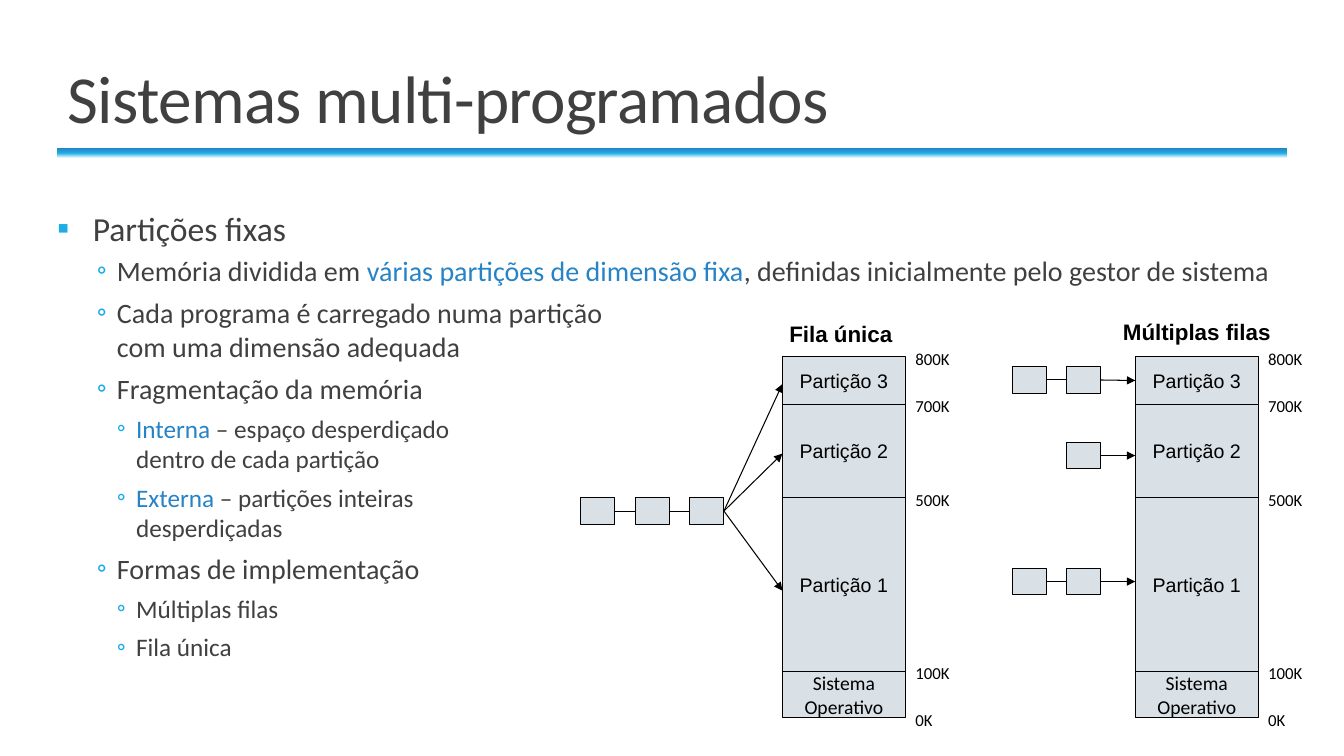
from copy import deepcopy
from dataclasses import dataclass
from itertools import accumulate

from lxml.etree import SubElement
from pptx import Presentation
from pptx.dml.color import RGBColor
from pptx.enum.shapes import MSO_CONNECTOR as Connector, MSO_SHAPE as Preset
from pptx.enum.text import MSO_ANCHOR as Anchor, MSO_AUTO_SIZE as AutoSize, PP_ALIGN as Align
from pptx.oxml.ns import qn
from pptx.util import Inches, Pt


@dataclass(frozen=True)
class Theme:
    text: str = "404040"
    accent: str = "2683C6"
    bullet: str = "1CADE4"
    block: str = "D9E0E6"
    white: str = "FFFFFF"
    black: str = "000000"
    body_font: str = "Calibri"
    diagram_font: str = "Arial"
    title_size: int = 48
    level_sizes: tuple = (24, 20, 18)
    heading_size: int = 16
    block_size: int = 14
    label_size: int = 12
    line_width: float = 0.75


@dataclass(frozen=True)
class Level:
    bullet: str
    margin: float
    hanging: float
    before: int
    after: int


@dataclass(frozen=True)
class Item:
    level: int
    phrases: tuple  # phrases at odd positions are highlighted


@dataclass(frozen=True)
class Partition:
    name: str
    height: float
    font: str


@dataclass(frozen=True)
class Queue:
    last_left: float
    top: float
    count: int
    targets: dict  # partition index -> arrow height, None for the middle


@dataclass(frozen=True)
class Scheme:
    heading: str
    heading_left: float
    heading_top: float
    left: float
    queues: tuple


THEME = Theme()
LEVELS = (Level("▪", 0.35, 0.35, 12, 2), Level("◦", 0.59, 0.2, 2, 4), Level("◦", 0.78, 0.19, 2, 4))
ITEMS = (
    Item(0, ("Partições fixas",)),
    Item(1, ("Memória dividida em ", "várias partições de dimensão fixa",
             ", definidas inicialmente pelo gestor de sistema")),
    Item(1, ("Cada programa é carregado numa partição \ncom uma dimensão adequada",)),
    Item(1, ("Fragmentação da memória",)),
    Item(2, ("", "Interna ", "– espaço desperdiçado \ndentro de cada partição")),
    Item(2, ("", "Externa", " – partições inteiras \ndesperdiçadas")),
    Item(1, ("Formas de implementação",)),
    Item(2, ("Múltiplas filas",)),
    Item(2, ("Fila única",)),
)
PARTITIONS = (
    Partition("Partição 3", 0.47, THEME.diagram_font),
    Partition("Partição 2", 0.93, THEME.diagram_font),
    Partition("Partição 1", 1.72, THEME.diagram_font),
    Partition("Sistema\nOperativo", 0.46, THEME.body_font),
)
LIMITS = ("800K", "700K", "500K", "100K", "0K")
MEMORY_TOP, MEMORY_WIDTH = 3.54, 1.22
JOB_WIDTH, JOB_HEIGHT, JOB_PITCH = 0.34, 0.26, 0.54
SCHEMES = (
    Scheme("Múltiplas filas", 10.76, 3.11, 11.26, (
        Queue(10.58, 3.64, 2, {0: None}),
        Queue(10.58, 4.39, 1, {1: 4.52}),
        Queue(10.58, 5.64, 2, {2: 5.77}))),
    Scheme("Fila única", 7.23, 3.13, 7.76, (
        Queue(6.84, 4.94, 3, {0: 3.81, 1: 4.5, 2: 5.86}),)),
)


def write(paragraph, text: str, *, size: float, color: str = THEME.black,
          font: str = THEME.body_font, bold: bool = False, align=None, tracking: int = 0) -> None:
    if align is not None:
        paragraph.alignment = align
    for index, line in enumerate(text.split("\n")):
        if index:
            paragraph.add_line_break()
        run = paragraph.add_run()
        run.text = line
        run.font.size, run.font.name, run.font.bold = Pt(size), font, bold
        run.font.color.rgb = RGBColor.from_string(color)
        if tracking:
            run._r.get_or_add_rPr().set("spc", str(tracking))


def place(shape, left: float, top: float, width: float, height: float) -> None:
    shape.left, shape.top = Inches(left), Inches(top)
    shape.width, shape.height = Inches(width), Inches(height)


def add_block(slide, left: float, top: float, width: float, height: float):
    shape = slide.shapes.add_shape(Preset.RECTANGLE, Inches(left), Inches(top),
                                   Inches(width), Inches(height))
    shape.shadow.inherit = False
    shape.fill.solid()
    shape.fill.fore_color.rgb = RGBColor.from_string(THEME.block)
    shape.line.color.rgb = RGBColor.from_string(THEME.black)
    shape.line.width = Pt(THEME.line_width)
    return shape


def add_label(slide, left: float, top: float, width: float, height: float,
              text: str, **style) -> None:
    frame = slide.shapes.add_textbox(Inches(left), Inches(top),
                                     Inches(width), Inches(height)).text_frame
    frame.word_wrap = True
    write(frame.paragraphs[0], text, **style)


def connect(slide, start, end, arrow: bool = False, end_height: float | None = None) -> None:
    end_y = end.top + end.height // 2 if end_height is None else Inches(end_height)
    line = slide.shapes.add_connector(Connector.STRAIGHT, start.left + start.width,
                                      start.top + start.height // 2, end.left, end_y)
    line.begin_connect(start, 3)
    if end_height is None:
        line.end_connect(end, 1)
    line.line.color.rgb = RGBColor.from_string(THEME.black)
    line.line.width = Pt(THEME.line_width)
    properties = line._element.spPr
    if arrow:
        SubElement(properties.find(qn("a:ln")), qn("a:tailEnd"), type="triangle")
    SubElement(properties, qn("a:effectLst"))


def add_title_bar(slide) -> None:
    bar = add_block(slide, 0.57, 1.47, 12.2, 0.1)
    bar.line.fill.background()
    bar.fill.gradient()
    bar.fill.gradient_angle = 90
    stops = bar._element.spPr.find(f".//{qn('a:gsLst')}")
    stops.insert(1, deepcopy(stops[0]))
    colors = (THEME.white, THEME.bullet, THEME.accent)
    for stop, position, color in zip(bar.fill.gradient_stops, (0, 0.5, 1), colors):
        stop.position = position
        stop.color.rgb = RGBColor.from_string(color)


def add_item(paragraph, item: Item) -> None:
    level = LEVELS[item.level]
    paragraph.level = item.level
    paragraph.space_before, paragraph.space_after = Pt(level.before), Pt(level.after)
    properties = paragraph._p.get_or_add_pPr()
    properties.set("marL", str(Inches(level.margin)))
    properties.set("indent", str(-Inches(level.hanging)))
    SubElement(SubElement(properties, qn("a:buClr")), qn("a:srgbClr"), val=THEME.bullet)
    SubElement(properties, qn("a:buFont"), typeface=THEME.body_font)
    SubElement(properties, qn("a:buChar"), char=level.bullet)
    for index, phrase in enumerate(item.phrases):
        if phrase:
            write(paragraph, phrase, size=THEME.level_sizes[item.level],
                  color=THEME.accent if index % 2 else THEME.text)


def add_scheme(slide, scheme: Scheme) -> None:
    tops = list(accumulate((partition.height for partition in PARTITIONS), initial=MEMORY_TOP))
    blocks = []
    for partition, top in zip(PARTITIONS, tops):
        block = add_block(slide, scheme.left, top, MEMORY_WIDTH, partition.height)
        block.text_frame.word_wrap = False
        block.text_frame.vertical_anchor = Anchor.MIDDLE
        write(block.text_frame.paragraphs[0], partition.name, size=THEME.block_size,
              font=partition.font, align=Align.CENTER)
        blocks.append(block)
    for limit, top in zip(LIMITS, tops):
        add_label(slide, scheme.left + MEMORY_WIDTH, top - 0.13, 0.61, 0.3, limit,
                  size=THEME.label_size)
    for queue in scheme.queues:
        jobs = [add_block(slide, queue.last_left - JOB_PITCH * step, queue.top, JOB_WIDTH, JOB_HEIGHT)
                for step in range(queue.count)]
        for following, job in zip(jobs, jobs[1:]):
            connect(slide, job, following)
        for index, height in queue.targets.items():
            connect(slide, jobs[0], blocks[index], arrow=True, end_height=height)
    add_label(slide, scheme.heading_left, scheme.heading_top, 2.22, 0.37, scheme.heading,
              size=THEME.heading_size, font=THEME.diagram_font, bold=True, align=Align.CENTER)


def main() -> None:
    presentation = Presentation()
    presentation.slide_width, presentation.slide_height = Inches(13.33), Inches(7.5)
    slide = presentation.slides.add_slide(presentation.slide_layouts[1])
    add_title_bar(slide)

    # Title
    title = slide.shapes.title
    place(title, 0.57, 0.29, 12.2, 1.12)
    title.text_frame.auto_size = AutoSize.NONE
    title.text_frame.vertical_anchor = Anchor.BOTTOM
    heading = title.text_frame.paragraphs[0]
    heading.line_spacing = 0.85
    write(heading, "Sistemas multi-programados", size=THEME.title_size, color=THEME.text,
          align=Align.LEFT, tracking=-50)

    # Bullet list
    body = slide.placeholders[1]
    place(body, 0.57, 2.01, 12.2, 4.82)
    frame = body.text_frame
    frame.auto_size = AutoSize.NONE
    frame.margin_left = frame.margin_right = 0
    for index, item in enumerate(ITEMS):
        add_item(frame.add_paragraph() if index else frame.paragraphs[0], item)

    # Memory diagrams
    for scheme in SCHEMES:
        add_scheme(slide, scheme)
    presentation.save("out.pptx")


if __name__ == "__main__":
    main()
